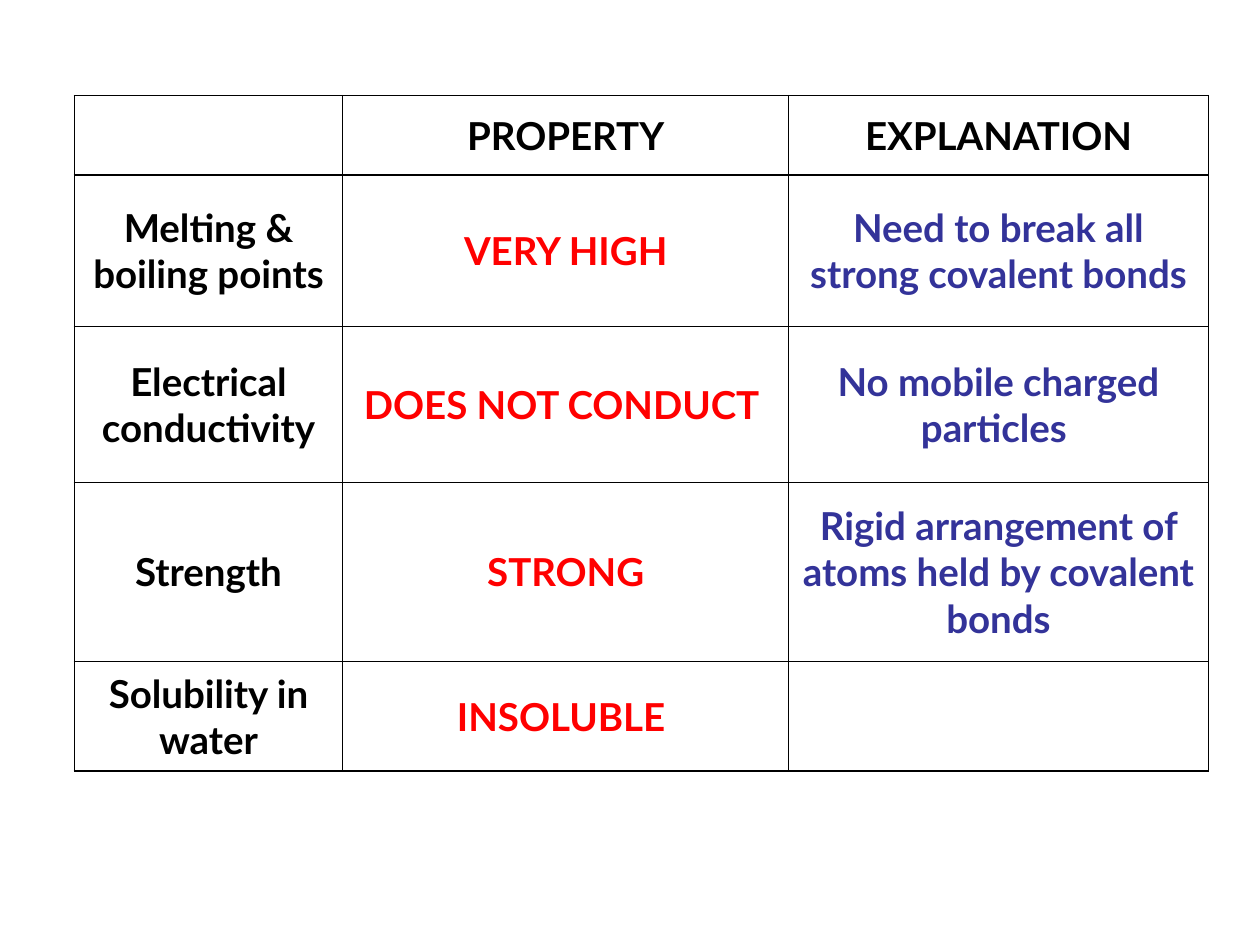
from lxml import etree
from pptx import Presentation, util as u
from pptx.dml.color import RGBColor
from pptx.enum import text
from pptx.oxml.ns import qn

BLACK, RED, BLUE = "000000", "FF0000", "333399"
COLUMN_WIDTHS = [2.13, 3.54, 3.33]
ROW_HEIGHTS = [0.63, 1.2, 1.24, 1.42, 0.87]
COLUMN_COLORS = [BLACK, RED, BLUE]
ROWS = [
    ["", "PROPERTY", "EXPLANATION"],
    ["Melting & boiling points", "VERY HIGH", "Need to break all strong covalent bonds"],
    ["Electrical conductivity", "DOES NOT CONDUCT ", "No mobile charged particles "],
    ["Strength", "STRONG", "Rigid arrangement of atoms held by covalent bonds"],
    ["Solubility in water", "INSOLUBLE ", ""],
]
FONT = {"name": "Lato", "size": u.Pt(22), "bold": True}


def add_borders(cell, color, width):
    """Draw a solid line on all four sides; borders must precede the cell fill."""
    properties = cell._tc.get_or_add_tcPr()
    for index, side in enumerate(("lnL", "lnR", "lnT", "lnB")):
        line = etree.Element(qn(f"a:{side}"), w=str(u.Pt(width)))
        fill = etree.SubElement(line, qn("a:solidFill"))
        etree.SubElement(fill, qn("a:srgbClr"), val=color)
        properties.insert(index, line)


deck = Presentation()
deck.slide_width, deck.slide_height = u.Inches(10), u.Inches(7.5)
page = deck.slides.add_slide(deck.slide_layouts[6])

table = page.shapes.add_table(
    len(ROWS), len(COLUMN_WIDTHS), u.Inches(0.59), u.Inches(0.76),
    u.Inches(sum(COLUMN_WIDTHS)), u.Inches(sum(ROW_HEIGHTS)),
).table
table.first_row = table.horz_banding = False
for column, width in zip(table.columns, COLUMN_WIDTHS):
    column.width = u.Inches(width)
for row, height in zip(table.rows, ROW_HEIGHTS):
    row.height = u.Inches(height)

for row_index, words in enumerate(ROWS):
    for column_index, word in enumerate(words):
        cell = table.cell(row_index, column_index)
        cell.fill.background()
        cell.vertical_anchor = text.MSO_ANCHOR.MIDDLE
        add_borders(cell, BLACK, 1)
        if not word:
            continue
        para = cell.text_frame.paragraphs[0]
        para.alignment = text.PP_ALIGN.CENTER
        span = para.add_run()
        span.text = word
        for name, value in FONT.items():
            setattr(span.font, name, value)
        color = BLACK if row_index == 0 else COLUMN_COLORS[column_index]
        span.font.color.rgb = RGBColor.from_string(color)

deck.save("out.pptx")
